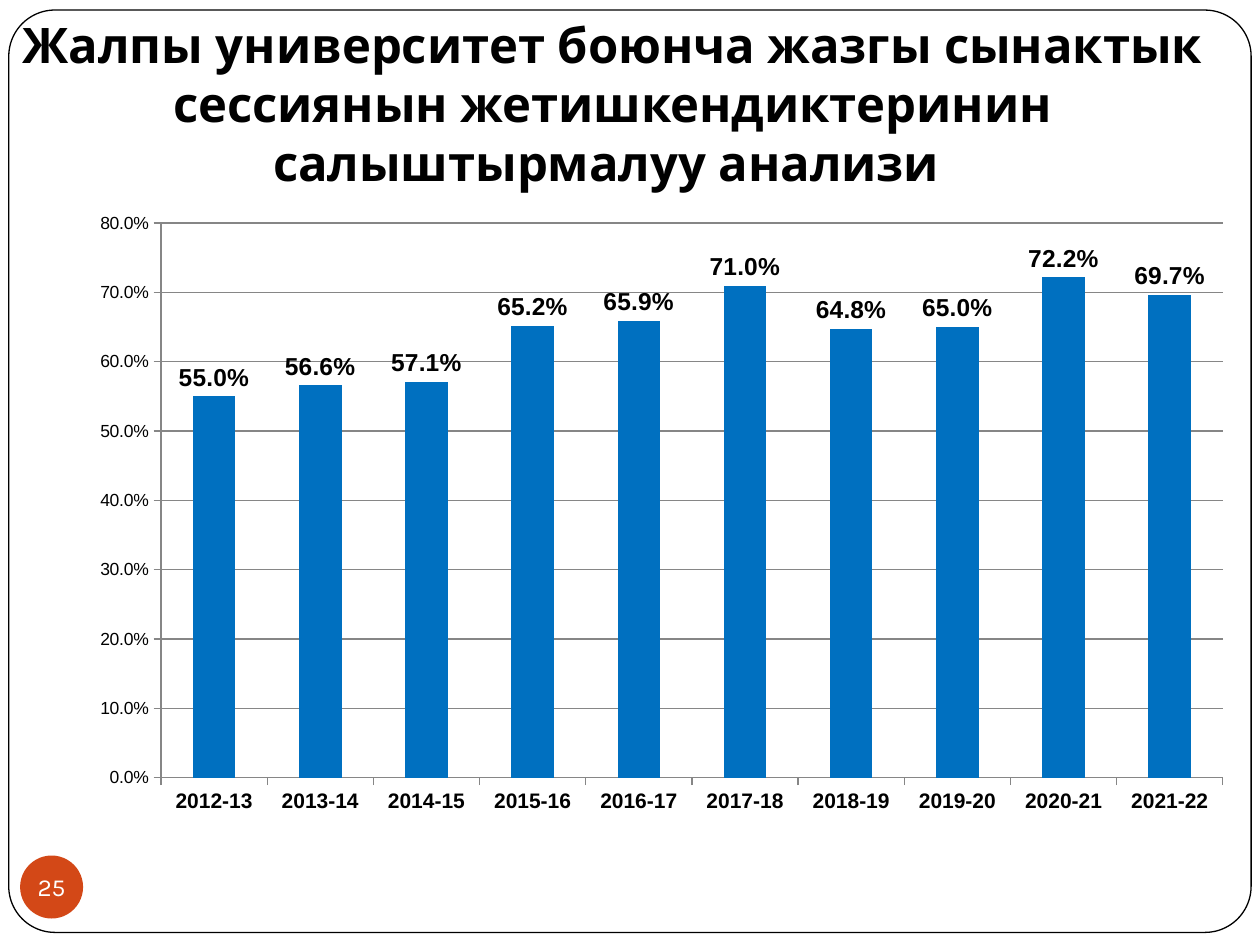
from lxml import etree
from pptx import Presentation
from pptx import util as u
from pptx.chart import data as cd
from pptx.dml import color as dc
from pptx.enum import chart as ce, shapes, text
from pptx.oxml import ns


def rgb(code):
    return dc.RGBColor.from_string(code)


def box(kind, at, fill):
    item = slide.shapes.add_shape(kind, *map(u.Inches, at))
    item.shadow.inherit = False
    item.fill.solid()
    item.fill.fore_color.rgb = rgb(fill)
    return item


prs = Presentation()
prs.slide_width, prs.slide_height = u.Inches(10), u.Inches(7.5)
slide = prs.slides.add_slide(prs.slide_layouts[6])

# Rounded page frame
frame = box(shapes.MSO_SHAPE.ROUNDED_RECTANGLE, (0.07, 0.08, 9.86, 7.32), "FFFFFF")
frame.adjustments[0] = 0.05
frame.line.color.rgb = rgb("000000")
frame.line.width = u.Pt(0.75)

# Title
title = slide.shapes.add_textbox(*map(u.Inches, (0, 0.68, 9.72, 0.94)))
body = title.text_frame
body.word_wrap = True
body.vertical_anchor = text.MSO_ANCHOR.BOTTOM
body.margin_bottom = u.Inches(0.1)
para = body.paragraphs[0]
para.text = ("Жалпы университет боюнча жазгы сынактык сессиянын "
             "жетишкендиктеринин салыштырмалуу анализи ")
para.alignment = text.PP_ALIGN.CENTER
para.font.name, para.font.size, para.font.bold = "Karla", u.Pt(28), True
para.font.color.rgb = rgb("000000")

# Page number
badge = box(shapes.MSO_SHAPE.OVAL, (0.16, 6.79, 0.5, 0.5), "D34817")
badge.line.fill.background()
body = badge.text_frame
body.margin_left = body.margin_right = body.margin_top = body.margin_bottom = 0
body.vertical_anchor = text.MSO_ANCHOR.MIDDLE
para = body.paragraphs[0]
para.text = "25"
para.alignment = text.PP_ALIGN.CENTER
para.font.name, para.font.size = "Karla", u.Pt(14)
para.font.color.rgb = rgb("FFFFFF")

# Results by academic year
rates = [0.55, 0.566, 0.571, 0.652, 0.659, 0.71, 0.648, 0.65, 0.722, 0.697]
data = cd.CategoryChartData(number_format="0.0%")
data.categories = [f"20{y}-{y + 1}" for y in range(12, 12 + len(rates))]
data.add_series("Series 1", rates)
chart = slide.shapes.add_chart(
    ce.XL_CHART_TYPE.COLUMN_CLUSTERED,
    *map(u.Inches, (0.2, 1.47, 9.8, 6.03)), data).chart
chart.has_legend = chart.has_title = False
chart.font.name, chart.font.size = "Arial", u.Pt(10)
chart.font.color.rgb = rgb("000000")

plot = chart.plots[0]
plot.gap_width = 150
plot.vary_by_categories = False
bars = plot.series[0].format.fill
bars.solid()
bars.fore_color.rgb = rgb("0070C0")
plot.has_data_labels = True
marks = plot.data_labels
marks.show_value = True
marks.position = ce.XL_LABEL_POSITION.OUTSIDE_END
marks.number_format, marks.number_format_is_linked = "0.0%", False
marks.font.size, marks.font.bold = u.Pt(14), True

years, scale = chart.category_axis, chart.value_axis
years.tick_labels.font.size, years.tick_labels.font.bold = u.Pt(12), True
scale.minimum_scale, scale.maximum_scale, scale.major_unit = 0, 0.8, 0.1
scale.tick_labels.number_format = "0.0%"
scale.tick_labels.number_format_is_linked = False
scale.has_major_gridlines = True
for axis in (years, scale):
    axis.major_tick_mark = ce.XL_TICK_MARK.OUTSIDE
for part in (years, scale, scale.major_gridlines):
    part.format.line.color.rgb = rgb("868686")
    part.format.line.width = u.Pt(0.75)

# Fixed inner plot area
area = chart.element.find(".//" + ns.qn("c:plotArea"))
for old in area.findall(ns.qn("c:layout")):
    area.remove(old)
layout = etree.Element(ns.qn("c:layout"))
area.insert(0, layout)
manual = etree.SubElement(layout, ns.qn("c:manualLayout"))
for tag, val in (("layoutTarget", "inner"), ("xMode", "edge"), ("yMode", "edge"),
                 ("x", 0.11), ("y", 0.05), ("w", 0.86), ("h", 0.73)):
    etree.SubElement(manual, ns.qn("c:" + tag)).set("val", str(val))

prs.save("out.pptx")
